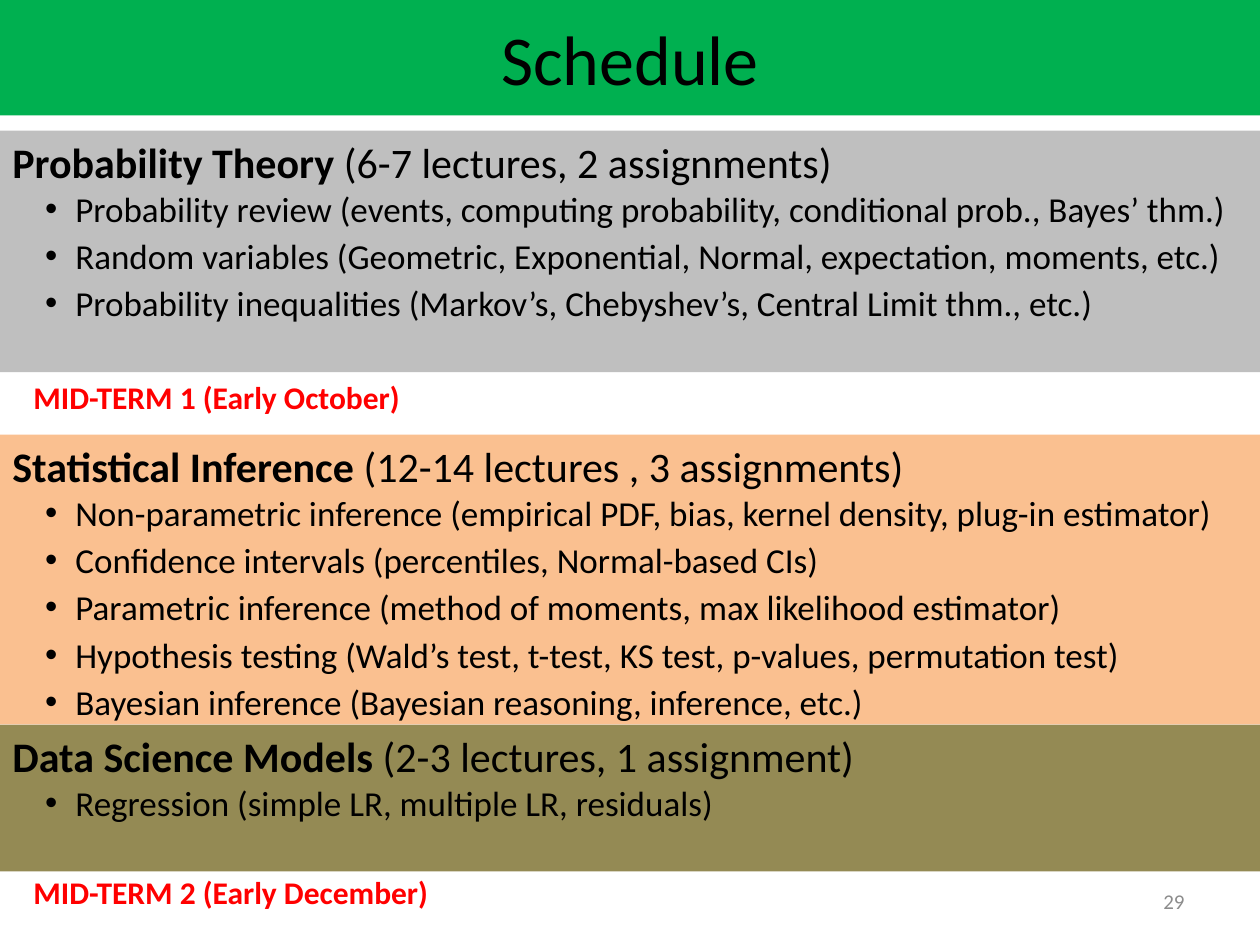
from pptx import Presentation
from pptx.dml.color import RGBColor
from pptx.enum.shapes import MSO_SHAPE
from pptx.enum.text import MSO_ANCHOR, PP_ALIGN
from pptx.oxml.ns import qn
from pptx.util import Pt
from lxml.etree import SubElement

COLORS = {
    "green": "00B050", "gray": "BFBFBF", "peach": "FAC090", "olive": "948A54",
    "black": "000000", "red": "FF0000", "number": "8C8C8C",
}
WIDTH, HEIGHT = 720, 540
FONT = "Calibri"
TITLE = "Schedule"
NUMBER = "29"

BLOCKS = [
    ("olive", 414, 84, "Data Science Models ", "(2-3 lectures, 1 assignment)", [
        "Regression (simple LR, multiple LR, residuals)",
    ]),
    ("peach", 248.4, 165.6, "Statistical Inference", " (12-14 lectures , 3 assignments)", [
        "Non-parametric inference (empirical PDF, bias, kernel density, plug-in estimator)",
        "Confidence intervals (percentiles, Normal-based CIs)",
        "Parametric inference (method of moments, max likelihood estimator)",
        "Hypothesis testing (Wald’s test, t-test, KS test, p-values, permutation test)",
        "Bayesian inference (Bayesian reasoning, inference, etc.)",
    ]),
    ("gray", 74.7, 138, "Probability Theory ", "(6-7 lectures, 2 assignments)", [
        "Probability review (events, computing probability, conditional prob., Bayes’ thm.)",
        "Random variables (Geometric, Exponential, Normal, expectation, moments, etc.)",
        "Probability inequalities (Markov’s, Chebyshev’s, Central Limit thm., etc.)",
    ]),
]
EXAMS = [
    ("MID-TERM 1 (Early October)", 212.6, 228),
    ("MID-TERM 2 (Early December)", 495.5, 306),
]


def add_run(para, text, size, color="black", bold=False):
    run = para.add_run()
    run.text = text
    font = run.font
    font.name, font.size, font.bold = FONT, Pt(size), bold
    font.color.rgb = RGBColor.from_string(COLORS[color])


def add_band(slide, color, top, height, anchor):
    band = slide.shapes.add_shape(MSO_SHAPE.RECTANGLE, 0, Pt(top), Pt(WIDTH), Pt(height))
    band.shadow.inherit = False
    band.fill.solid()
    band.fill.fore_color.rgb = RGBColor.from_string(COLORS[color])
    band.line.fill.background()
    frame = band.text_frame
    frame.word_wrap = True
    frame.vertical_anchor = anchor
    return frame


def add_label(slide, left, top, width, anchor):
    box = slide.shapes.add_textbox(Pt(left), Pt(top), Pt(width), Pt(29))
    frame = box.text_frame
    frame.word_wrap = True
    frame.vertical_anchor = anchor
    return frame.paragraphs[0]


def add_bullet(frame, text):
    para = frame.add_paragraph()
    para.alignment = PP_ALIGN.LEFT
    para.level = 1
    para.space_after = Pt(3)
    props = para._p.get_or_add_pPr()
    props.set("marL", str(Pt(36)))
    props.set("indent", str(Pt(-17.3)))
    SubElement(props, qn("a:buFont"), typeface="Arial")
    SubElement(props, qn("a:buChar"), char="•")
    add_run(para, text, 20)


def main():
    deck = Presentation()
    deck.slide_width, deck.slide_height = Pt(WIDTH), Pt(HEIGHT)
    slide = deck.slides.add_slide(deck.slide_layouts[6])

    title = add_band(slide, "green", 0, 66, MSO_ANCHOR.MIDDLE).paragraphs[0]
    title.alignment = PP_ALIGN.CENTER
    add_run(title, TITLE, 40)

    number = add_label(slide, 516, 500.5, 168, MSO_ANCHOR.MIDDLE)
    number.alignment = PP_ALIGN.RIGHT
    add_run(number, NUMBER, 12, "number")

    for color, top, height, topic, load, items in BLOCKS:
        frame = add_band(slide, color, top, height, MSO_ANCHOR.TOP)
        head = frame.paragraphs[0]
        head.alignment = PP_ALIGN.LEFT
        add_run(head, topic, 24, bold=True)
        add_run(head, load, 24)
        for item in items:
            add_bullet(frame, item)

    for text, top, width in EXAMS:
        add_run(add_label(slide, 12, top, width, MSO_ANCHOR.TOP), text, 18, "red", True)

    deck.save("out.pptx")


if __name__ == "__main__":
    main()
